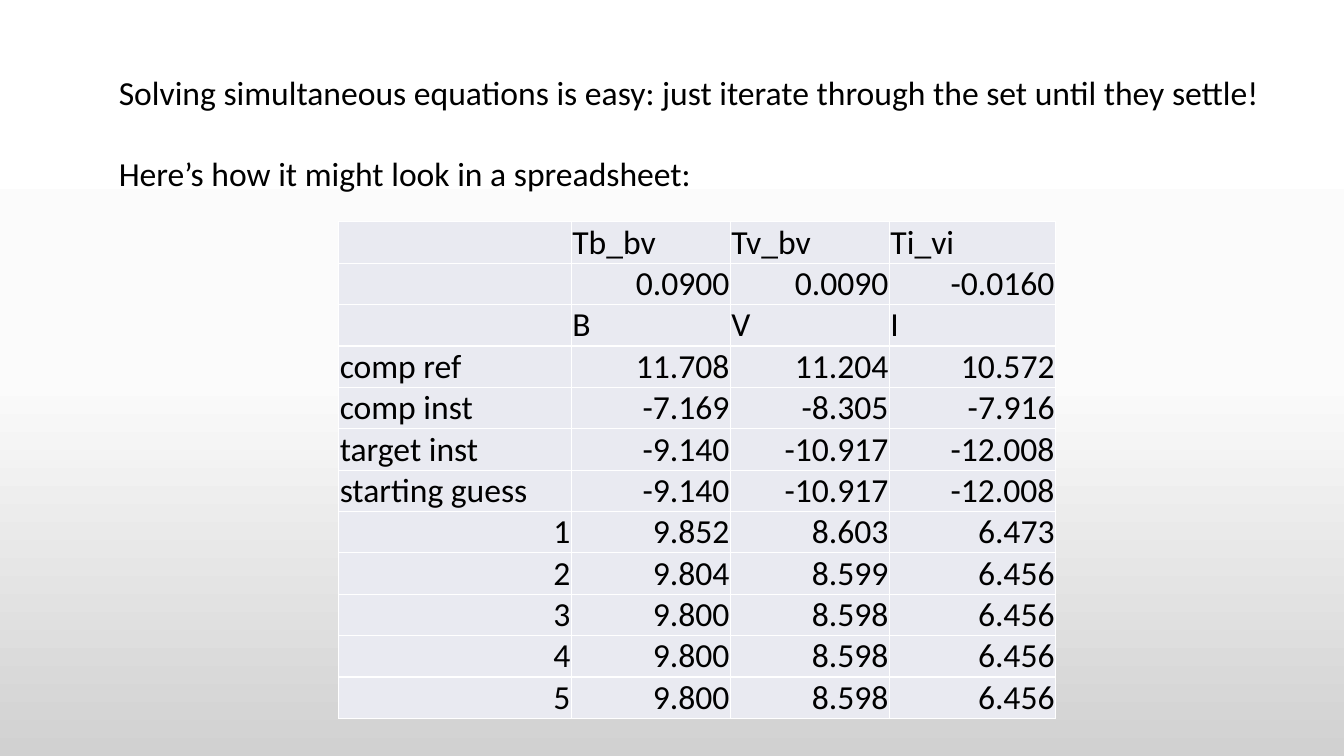
from copy import deepcopy

from lxml import etree
from pptx import Presentation
from pptx.dml.color import RGBColor
from pptx.enum import text
from pptx.oxml import ns
from pptx.util import Inches, Pt

BLACK = RGBColor(0x00, 0x00, 0x00)
WHITE = RGBColor(0xFF, 0xFF, 0xFF)
CELL_FILL = RGBColor(0xE9, 0xEA, 0xF1)
BACKGROUND_STOPS = [(0, WHITE), (0.5, RGBColor(0xFB, 0xFB, 0xFB)), (1, RGBColor(0xD1, 0xD1, 0xD1))]

INTRODUCTION = [
    "Solving simultaneous equations is easy: just iterate through the set until they settle!",
    "Here’s how it might look in a spreadsheet:",
]
COLUMN_WIDTHS = [2.31, 1.58, 1.58, 1.65]
SPREADSHEET = [
    ["", "Tb_bv", "Tv_bv", "Ti_vi"],
    ["", "0.0900", "0.0090", "-0.0160"],
    ["", "B", "V", "I"],
    ["comp ref", "11.708", "11.204", "10.572"],
    ["comp inst", "-7.169", "-8.305", "-7.916"],
    ["target inst", "-9.140", "-10.917", "-12.008"],
    ["starting guess", "-9.140", "-10.917", "-12.008"],
    ["1", "9.852", "8.603", "6.473"],
    ["2", "9.804", "8.599", "6.456"],
    ["3", "9.800", "8.598", "6.456"],
    ["4", "9.800", "8.598", "6.456"],
    ["5", "9.800", "8.598", "6.456"],
]


def style_runs(paragraph):
    """Give the runs of a paragraph the slide's common font."""
    for run in paragraph.runs:
        run.font.name = "Calibri"
        run.font.size = Pt(24)
        run.font.color.rgb = BLACK


def paint_background(slide):
    """Fill the background with a vertical three-stop gradient."""
    fill = slide.background.fill
    fill.gradient()
    fill.gradient_angle = 270
    stop_list = slide.element.xpath(".//p:bg//a:gsLst")[0]
    stop_list.append(deepcopy(stop_list[0]))
    for stop, (position, color) in zip(fill.gradient_stops, BACKGROUND_STOPS):
        stop.position = position
        stop.color.rgb = color


def add_introduction(slide, left, top, width, height):
    """Place the two introductory lines in the given box."""
    box = slide.shapes.add_textbox(left, top, width, height)
    frame = box.text_frame
    frame.text = "\n".join(INTRODUCTION)
    frame.word_wrap = False
    frame.auto_size = text.MSO_AUTO_SIZE.SHAPE_TO_FIT_TEXT
    for paragraph in frame.paragraphs:
        style_runs(paragraph)
    frame.paragraphs[1].space_before = Pt(29)


def add_cell_borders(cell):
    """Draw a thin white line along each side of a cell."""
    properties = cell._tc.get_or_add_tcPr()
    for index, side in enumerate(("lnL", "lnR", "lnT", "lnB")):
        line = etree.Element(ns.qn(f"a:{side}"), w=str(Pt(1)))
        fill = etree.SubElement(line, ns.qn("a:solidFill"))
        etree.SubElement(fill, ns.qn("a:srgbClr"), val=str(WHITE))
        properties.insert(index, line)


def fill_cell(cell, value):
    """Write a value, with numbers set to the right, and style its cell."""
    cell.text = value
    cell.fill.solid()
    cell.fill.fore_color.rgb = CELL_FILL
    cell.vertical_anchor = text.MSO_ANCHOR.BOTTOM
    cell.margin_left = cell.margin_right = Inches(0.01)
    cell.margin_top = cell.margin_bottom = 0
    paragraph = cell.text_frame.paragraphs[0]
    if value[-1:].isdigit():
        paragraph.alignment = text.PP_ALIGN.RIGHT
    style_runs(paragraph)
    add_cell_borders(cell)


def add_spreadsheet(slide, left, top, width, height):
    """Place the iteration table in the given box."""
    table = slide.shapes.add_table(
        len(SPREADSHEET), len(COLUMN_WIDTHS), left, top, width, height
    ).table
    table.first_row = False
    table.horz_banding = False
    for column, share in zip(table.columns, COLUMN_WIDTHS):
        column.width = int(width * share / sum(COLUMN_WIDTHS))
    for row, values in zip(table.rows, SPREADSHEET):
        for cell, value in zip(row.cells, values):
            fill_cell(cell, value)


def main():
    """Build the slide and save the presentation."""
    presentation = Presentation()
    presentation.slide_width = Inches(13.33)
    presentation.slide_height = Inches(7.5)
    slide = presentation.slides.add_slide(presentation.slide_layouts[6])
    paint_background(slide)
    add_introduction(slide, Inches(1.08), Inches(0.66), Inches(11.63), Inches(1.31))
    add_spreadsheet(slide, Inches(3.36), Inches(2.2), Inches(7.11), Inches(4.93))
    presentation.save("out.pptx")


if __name__ == "__main__":
    main()
